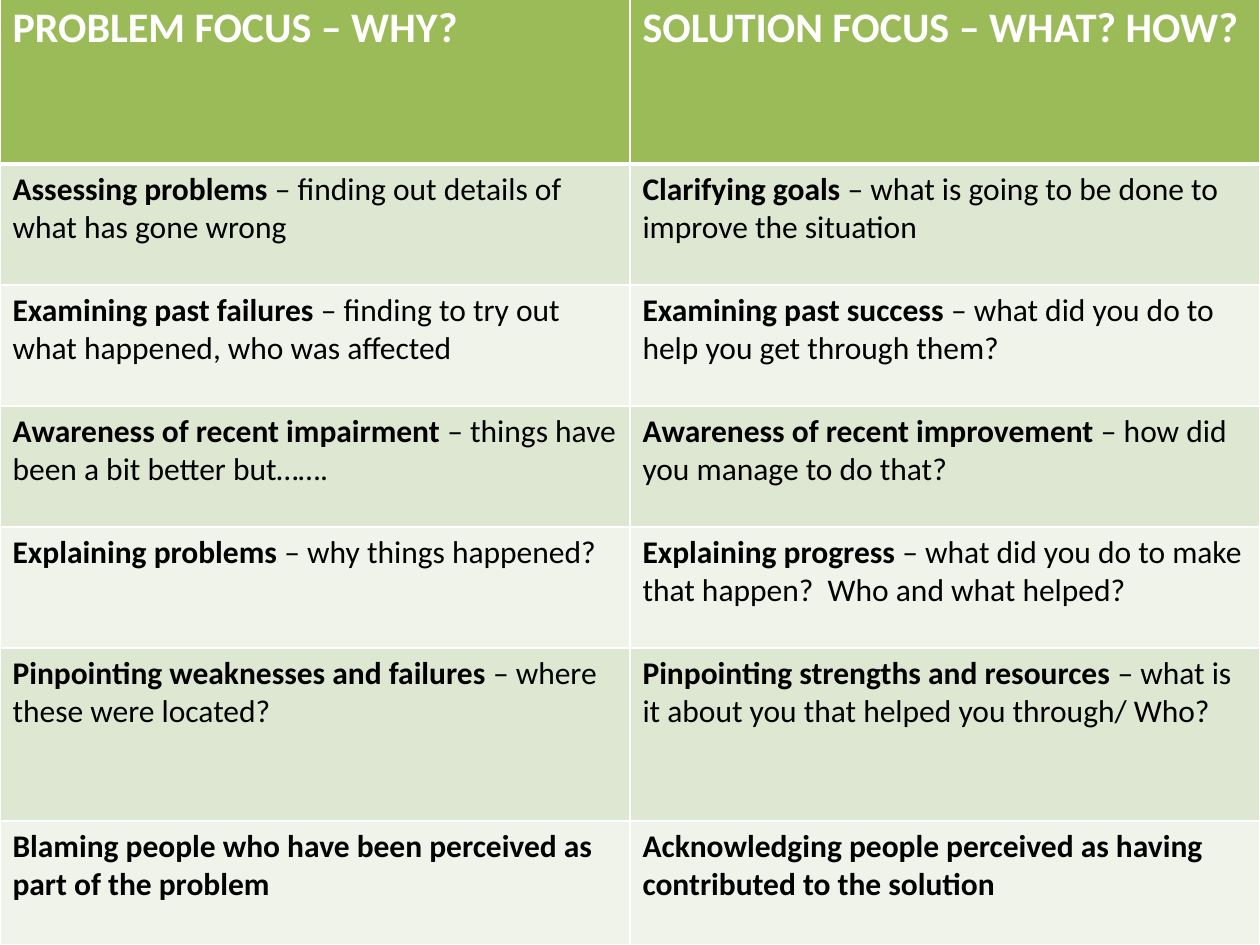
from typing import NamedTuple

from lxml.etree import SubElement
from pptx import Presentation
from pptx.dml.color import RGBColor
from pptx.oxml.ns import qn
from pptx.util import Emu, Pt

PX = 914400 // 126  # EMU in one px
COLORS = {
    "white": "FFFFFF",
    "black": "000000",
    "header": "9BBB59",
    "band_dark": "DEE7D1",
    "band_light": "EFF3EA",
}
FONT = "Calibri"
COLUMN_WIDTH = 630
TABLE_TOP = -4


class Entry(NamedTuple):
    lead: str
    detail: str = ""


class Row(NamedTuple):
    height: int
    problem: Entry
    solution: Entry


ROWS = [
    Row(168, Entry("PROBLEM FOCUS – WHY?"), Entry("SOLUTION FOCUS – WHAT? HOW?")),
    Row(121,
        Entry("Assessing problems ", "– finding out details of what has gone wrong"),
        Entry("Clarifying goals ", "– what is going to be done to improve the situation")),
    Row(121,
        Entry("Examining past failures ", "– finding to try out what happened, who was affected"),
        Entry("Examining past success ", "– what did you do to help you get through them?")),
    Row(121,
        Entry("Awareness of recent impairment ", "– things have been a bit better but……."),
        Entry("Awareness of recent improvement ", "– how did you manage to do that?")),
    Row(121,
        Entry("Explaining problems ", "– why things happened?"),
        Entry("Explaining progress ",
              "– what did you do to make that happen?  Who and what helped?")),
    Row(173,
        Entry("Pinpointing weaknesses and failures ", "– where these were located?"),
        Entry("Pinpointing strengths and resources ",
              "– what is it about you that helped you through/ Who?")),
    Row(124,
        Entry("Blaming people who have been perceived as part of the problem"),
        Entry("Acknowledging people perceived as having contributed to the solution")),
]


def px(length: int) -> Emu:
    return Emu(length * PX)


def add_text(paragraph, text: str, *, size: int, color: str, bold: bool) -> None:
    run = paragraph.add_run()
    run.text = text
    run.font.name = FONT
    run.font.size = Pt(size)
    run.font.bold = bold
    run.font.color.rgb = RGBColor.from_string(COLORS[color])


def set_borders(cell, *, color: str, top: int, bottom: int) -> None:
    properties = cell._tc.get_or_add_tcPr()
    for side, width in (("L", 1), ("R", 1), ("T", top), ("B", bottom)):
        line = SubElement(properties, qn(f"a:ln{side}"), w=str(Pt(width)))
        fill = SubElement(line, qn("a:solidFill"))
        SubElement(fill, qn("a:srgbClr"), val=COLORS[color])


def fill_cell(cell, entry: Entry, row_index: int) -> None:
    is_header = row_index == 0
    background = "header" if is_header else ("band_light", "band_dark")[row_index % 2]
    size, color = (24, "white") if is_header else (18, "black")
    set_borders(cell, color="white", top=3 if row_index == 1 else 1,
                bottom=3 if is_header else 1)
    cell.fill.solid()
    cell.fill.fore_color.rgb = RGBColor.from_string(COLORS[background])
    paragraph = cell.text_frame.paragraphs[0]
    add_text(paragraph, entry.lead, size=size, color=color, bold=True)
    if entry.detail:
        add_text(paragraph, entry.detail, size=size, color=color, bold=False)


def add_comparison_table(slide, rows: list[Row]) -> None:
    height = sum(row.height for row in rows)
    table = slide.shapes.add_table(len(rows), 2, 0, px(TABLE_TOP),
                                   px(2 * COLUMN_WIDTH), px(height)).table
    for column in table.columns:
        column.width = px(COLUMN_WIDTH)
    for row_index, row in enumerate(rows):
        table.rows[row_index].height = px(row.height)
        for column_index, entry in enumerate((row.problem, row.solution)):
            fill_cell(table.cell(row_index, column_index), entry, row_index)


def main() -> None:
    presentation = Presentation()
    presentation.slide_width, presentation.slide_height = px(1260), px(945)
    # Blank layout
    slide = presentation.slides.add_slide(presentation.slide_layouts[6])
    # Problem focus against solution focus
    add_comparison_table(slide, ROWS)
    presentation.save("out.pptx")


if __name__ == "__main__":
    main()
